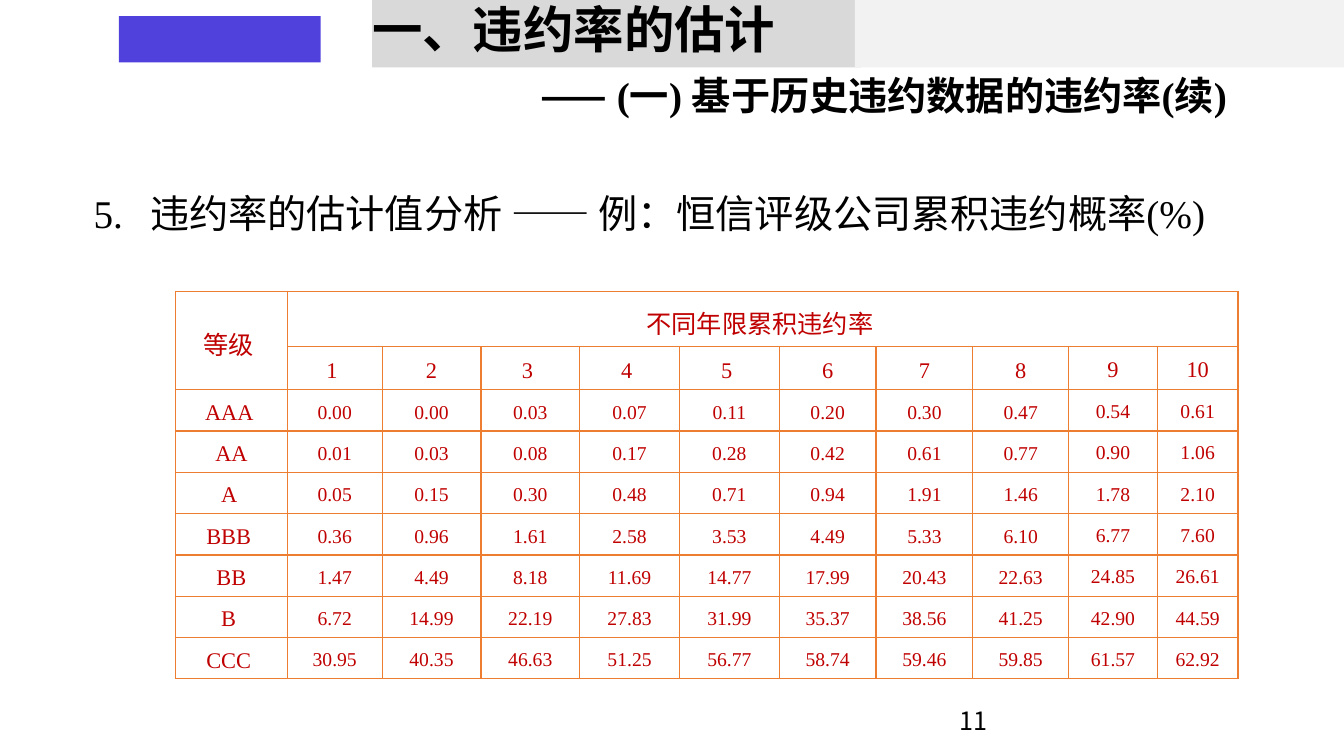
from pptx import Presentation
from pptx import util as u
from pptx.dml import color
from pptx.enum import shapes, text
from pptx.oxml import ns
from lxml import etree

CJK = "Noto Sans CJK SC"
SERIF = "Times New Roman"
BLACK, RED, ORANGE, VIOLET = "000000", "C00000", "ED7D31", "5041DD"

COLUMN_WIDTHS = [1.11, 0.94, 0.98, 0.98, 0.99, 0.99, 0.96, 0.96, 0.95, 0.88, 0.8]
ROW_HEIGHTS = [0.55] + [0.41] * 8
YEARS = ["1 ", "2", "3 ", "4 ", "5 ", "6", "7", "8", "9", "10"]
DEFAULT_RATES = {
    "AAA ": "0.00 0.00 0.03 0.07 0.11 0.20 0.30 0.47 0.54 0.61",
    "AA": "0.01 0.03 0.08 0.17 0.28 0.42 0.61 0.77 0.90 1.06",
    "A ": "0.05 0.15 0.30 0.48 0.71 0.94 1.91 1.46 1.78 2.10",
    "BBB ": "0.36 0.96 1.61 2.58 3.53 4.49 5.33 6.10 6.77 7.60",
    "BB": "1.47 4.49 8.18 11.69 14.77 17.99 20.43 22.63 24.85 26.61",
    "B ": "6.72 14.99 22.19 27.83 31.99 35.37 38.56 41.25 42.90 44.59",
    "CCC ": "30.95 40.35 46.63 51.25 56.77 58.74 59.46 59.85 61.57 62.92",
}


def rgb(value):
    return color.RGBColor.from_string(value)


class SlideBuilder:
    def __init__(self, presentation):
        self.slide = presentation.slides.add_slide(presentation.slide_layouts[5])

    def run(self, paragraph, words, size, fill=BLACK, font=SERIF, bold=False):
        run = paragraph.add_run()
        run.text = words
        run.font.size = u.Pt(size)
        run.font.bold = bold
        run.font.name = font
        run.font.color.rgb = rgb(fill)
        east_asian = etree.SubElement(run.font._element, ns.qn("a:ea"))
        east_asian.set("typeface", CJK)

    def indent(self, paragraph, left, first):
        properties = paragraph._p.get_or_add_pPr()
        properties.set("marL", str(u.Inches(left)))
        properties.set("indent", str(u.Inches(first)))

    def place(self, shape, left, top, width, height):
        shape.left, shape.top = u.Inches(left), u.Inches(top)
        shape.width, shape.height = u.Inches(width), u.Inches(height)

    def rectangle(self, left, top, width, height, fill):
        shape = self.slide.shapes.add_shape(
            shapes.MSO_SHAPE.RECTANGLE, u.Inches(left), u.Inches(top),
            u.Inches(width), u.Inches(height))
        shape.shadow.inherit = False
        shape.fill.solid()
        shape.fill.fore_color.rgb = rgb(fill)
        shape.line.fill.background()

    def textbox(self, left, top, width, height):
        frame = self.slide.shapes.add_textbox(
            u.Inches(left), u.Inches(top), u.Inches(width), u.Inches(height)).text_frame
        frame.word_wrap = True
        return frame

    def title(self, heading, dash, subheading):
        shape = self.slide.shapes.title
        self.place(shape, 3.59, 0, 9.14, 1.45)
        self.slide.shapes._spTree.append(shape._element)
        frame = shape.text_frame
        frame.word_wrap = True
        frame.auto_size = text.MSO_AUTO_SIZE.NONE
        frame.vertical_anchor = text.MSO_ANCHOR.TOP
        frame.margin_top = u.Inches(0.05)
        first, second = frame.paragraphs[0], frame.add_paragraph()
        first.alignment = second.alignment = text.PP_ALIGN.LEFT
        first.line_spacing = 0.9
        self.run(first, heading, 36, bold=True)
        self.indent(second, 0, 1.67)
        second.line_spacing = 0.98
        second.space_before = u.Pt(10)
        self.run(second, dash, 28, font=CJK, bold=True)
        self.run(second, subheading, 28, bold=True)

    def cell(self, cell, words, size, margin):
        cell.fill.background()
        cell.vertical_anchor = text.MSO_ANCHOR.MIDDLE
        cell.margin_left = cell.margin_right = u.Inches(margin)
        cell.margin_top = u.Inches(0.01 if margin else 0)
        cell.margin_bottom = 0
        paragraph = cell.text_frame.paragraphs[0]
        paragraph.alignment = text.PP_ALIGN.CENTER
        paragraph.line_spacing = 1.15
        paragraph.space_after = u.Pt(10)
        if words:
            self.run(paragraph, words, size, RED)
        properties = cell._tc.get_or_add_tcPr()
        for position, side in enumerate(("lnL", "lnR", "lnT", "lnB")):
            line = etree.Element(ns.qn(f"a:{side}"), w=str(u.Pt(1)))
            fill = etree.SubElement(line, ns.qn("a:solidFill"))
            etree.SubElement(fill, ns.qn("a:srgbClr"), val=ORANGE)
            properties.insert(position, line)

    def table(self, left, top, rows):
        table = self.slide.shapes.add_table(
            len(rows), len(COLUMN_WIDTHS), u.Inches(left), u.Inches(top),
            u.Inches(sum(COLUMN_WIDTHS)), u.Inches(sum(ROW_HEIGHTS))).table
        table.first_row = table.horz_banding = False
        for column, width in zip(table.columns, COLUMN_WIDTHS):
            column.width = u.Inches(width)
        for row, height in zip(table.rows, ROW_HEIGHTS):
            row.height = u.Inches(height)
        for i, row in enumerate(rows):
            for j, words in enumerate(row):
                size = 18 if i == 0 else 16 if i == 1 or j == 0 else 14
                self.cell(table.cell(i, j), words, size, 0.1 if j < 9 else 0)
        table.cell(0, 0).merge(table.cell(1, 0))
        table.cell(0, 1).merge(table.cell(0, 10))


def main():
    presentation = Presentation()
    presentation.slide_width = u.Inches(13.33)
    presentation.slide_height = u.Inches(7.5)
    builder = SlideBuilder(presentation)

    builder.rectangle(3.69, 0, 4.85, 0.67, "D9D9D9")
    builder.rectangle(8.48, 0, 4.85, 0.67, "F2F2F2")
    builder.rectangle(1.18, 0.16, 2, 0.46, VIOLET)

    point = builder.textbox(0.83, 1.88, 11.78, 0.7).paragraphs[0]
    builder.indent(point, 0.56, -0.56)
    point.line_spacing = 0.9
    builder.run(point, "5.\t违约率的估计值分析 —— 例：恒信评级公司累积违约概率(%)", 28)

    page_number = builder.textbox(9.42, 6.95, 3, 0.4).paragraphs[0]
    builder.run(page_number, "11", 18, BLACK, CJK)

    builder.title("一、违约率的估计", "——", " (一) 基于历史违约数据的违约率(续)")

    header = ["等级 ", "不同年限累积违约率 "] + [""] * 9
    rates = [[grade, *values.split()] for grade, values in DEFAULT_RATES.items()]
    builder.table(1.74, 2.89, [header, ["", *YEARS], *rates])

    presentation.save("out.pptx")


if __name__ == "__main__":
    main()
